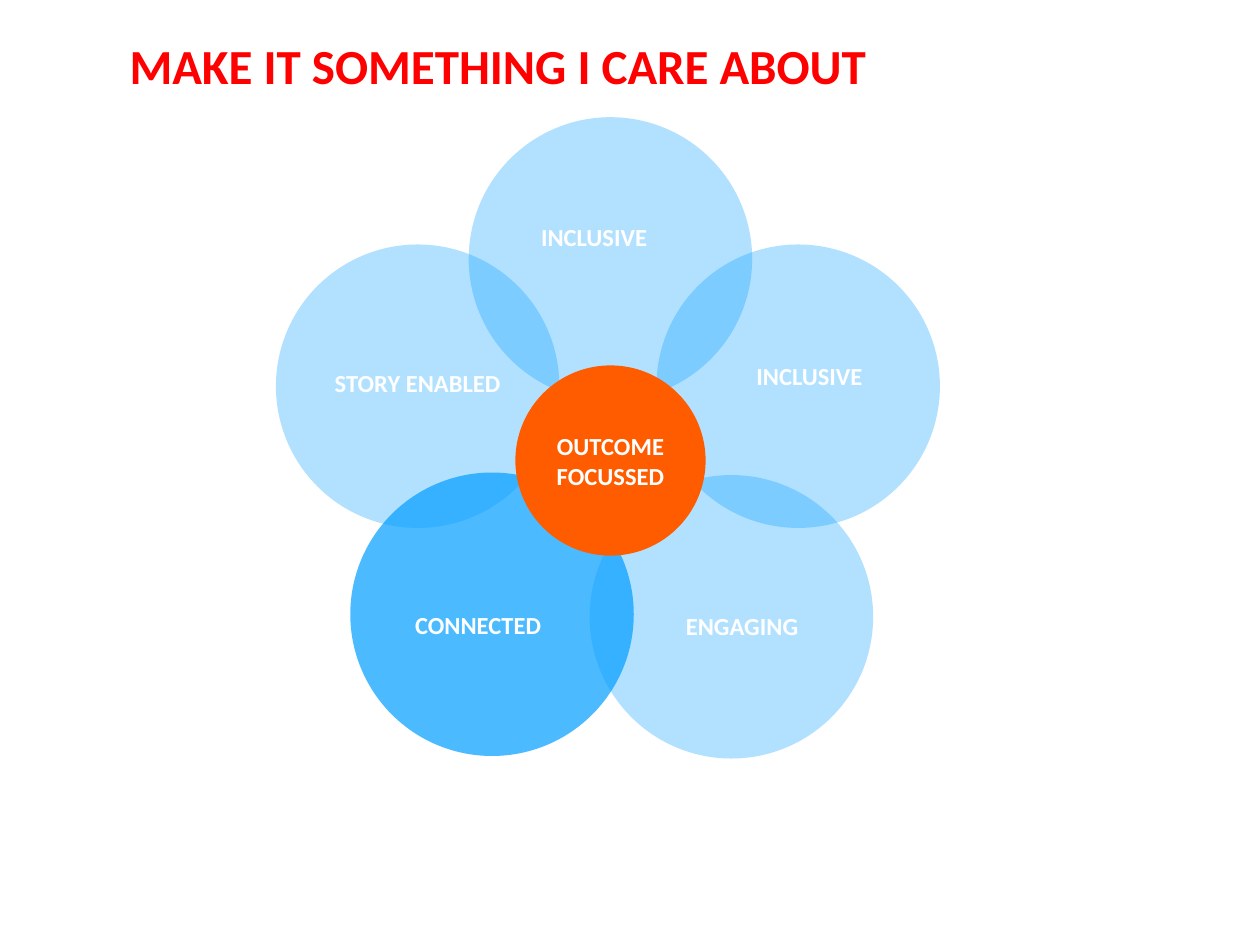
from dataclasses import dataclass
from lxml import etree
from pptx import Presentation
from pptx.dml.color import RGBColor
from pptx.enum import shapes, text
from pptx.oxml import ns
from pptx.util import Inches, Pt


@dataclass(frozen=True)
class Theme:
    """Colours, font and type sizes of the slide."""
    red: str = "FF0000"
    blue: str = "009DFF"
    orange: str = "FF5C00"
    white: str = "FFFFFF"
    font: str = "Calibri"
    head: int = 28
    label: int = 14


THEME = Theme()
PETAL = 2.25
CORE = 1.51
PETALS = [
    (1.53, 0, 30), (3.02, 1.01, 30), (0, 1.01, 30),
    (0.59, 2.82, 70), (2.49, 2.84, 30),
]
LABELS = [
    ("INCLUSIVE", 1.98, 0.78, 1.09), ("INCLUSIVE", 3.25, 1.89, 1.97),
    ("ENGAGING", 2.62, 3.87, 2.16), ("CONNECTED", 0.54, 3.86, 2.13),
    ("STORY ENABLED", 0.11, 1.94, 2.03),
]


def write(frame, words, size, color, wrap=True):
    """Fill a text frame with bold, centred words."""
    frame.text = words
    frame.word_wrap = wrap
    for para in frame.paragraphs:
        para.alignment = text.PP_ALIGN.CENTER
        for run in para.runs:
            font = run.font
            font.name, font.size, font.bold = THEME.font, Pt(size), True
            font.color.rgb = RGBColor.from_string(color)


def add_disc(slide, left, top, size, color, alpha=100):
    """Add a plain circle with an opacity in percent."""
    disc = slide.shapes.add_shape(
        shapes.MSO_SHAPE.OVAL, Inches(left), Inches(top), Inches(size), Inches(size))
    disc.shadow.inherit = False
    disc.line.fill.background()
    disc.fill.solid()
    disc.fill.fore_color.rgb = RGBColor.from_string(color)
    if alpha < 100:
        tone = disc._element.spPr.find(".//" + ns.qn("a:srgbClr"))
        etree.SubElement(tone, ns.qn("a:alpha")).set("val", str(alpha * 1000))
    return disc


def add_title(slide, left, top, width, height):
    """Place and format the title."""
    title = slide.shapes.title
    title.left, title.top = Inches(left), Inches(top)
    title.width, title.height = Inches(width), Inches(height)
    title.text_frame.vertical_anchor = text.MSO_ANCHOR.TOP
    write(title.text_frame, "MAKE IT SOMETHING I CARE ABOUT", THEME.head, THEME.red)


def add_flower(slide, left, top):
    """Draw the petals, their labels and the core from a top left corner."""
    for x, y, alpha in PETALS:
        add_disc(slide, left + x, top + y, PETAL, THEME.blue, alpha).rotation = 212
    for words, x, y, width in LABELS:
        box = slide.shapes.add_textbox(
            Inches(left + x), Inches(top + y), Inches(width), Inches(0.33))
        write(box.text_frame, words, THEME.label, THEME.white)
    core = add_disc(slide, left + 1.9, top + 1.97, CORE, THEME.orange)
    core.text_frame.vertical_anchor = text.MSO_ANCHOR.MIDDLE
    write(core.text_frame, "OUTCOME\nFOCUSSED", THEME.label, THEME.white, wrap=False)


def main():
    """Build and save the slide."""
    deck = Presentation()
    deck.slide_width, deck.slide_height = Inches(10), Inches(7.5)
    slide = deck.slides.add_slide(deck.slide_layouts[5])
    add_title(slide, 0.2, 0.23, 7.5, 1.04)
    add_flower(slide, 2.19, 0.93)
    deck.save("out.pptx")


if __name__ == "__main__":
    main()
